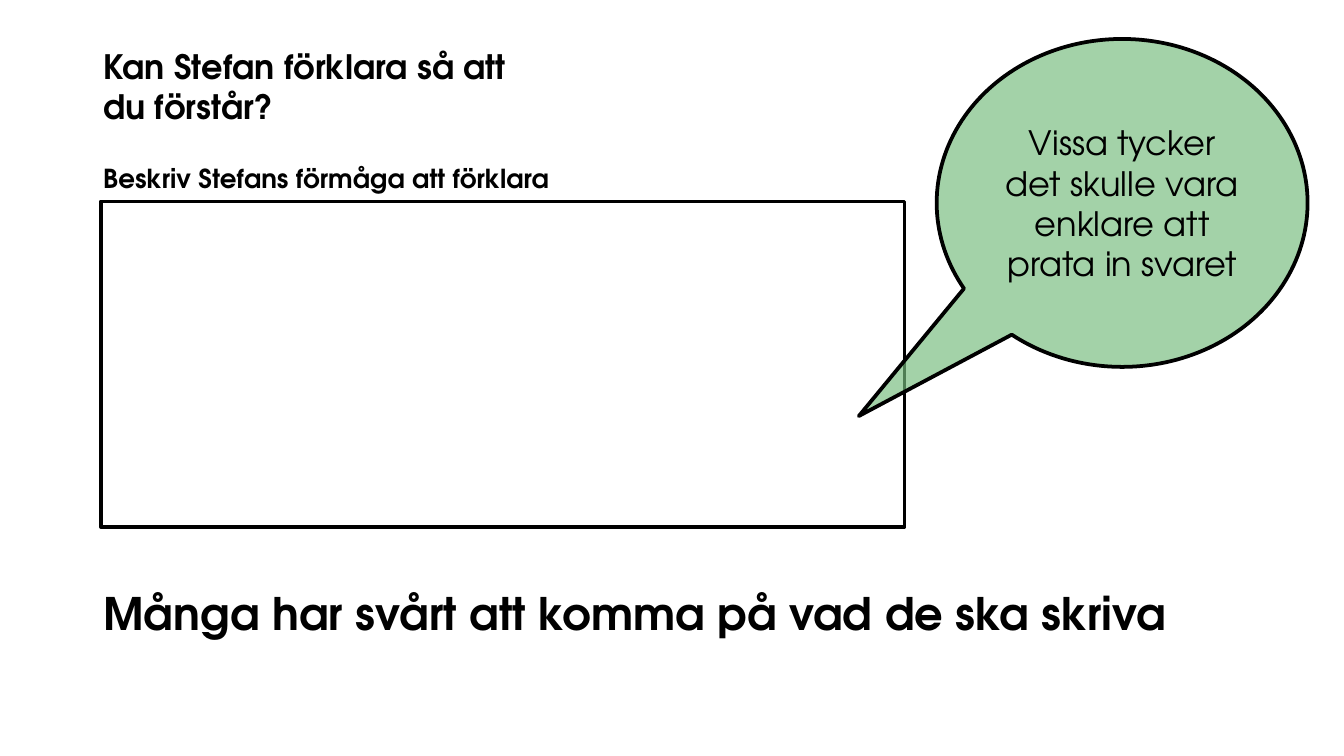
import pptx
import pptx.util
import pptx.dml.color
import pptx.enum.shapes
import pptx.enum.text
import pptx.oxml
import pptx.oxml.ns

# Content
HEADLINE = "Många har svårt att komma på vad de ska skriva"
FORM_QUESTION = "Kan Stefan förklara så att du förstår?"
ANSWER_LABEL = "Beskriv Stefans förmåga att förklara"
SPEECH = "Vissa tycker det skulle vara enklare att prata in svaret"

# Style and layout, in inches
FONT = "TeX Gyre Adventor"
BLACK = pptx.dml.color.RGBColor(0x00, 0x00, 0x00)
GREEN = pptx.dml.color.RGBColor(0x76, 0xBC, 0x7E)
GREEN_OPACITY = 67
SLIDE_WIDTH = 10
SLIDE_HEIGHT = SLIDE_WIDTH * 9 / 16
LEFT = 0.67
TOP = 0.29

SHAPES = pptx.enum.shapes.MSO_SHAPE
ALIGN = pptx.enum.text.PP_ALIGN
ANCHOR = pptx.enum.text.MSO_ANCHOR
AUTO_SIZE = pptx.enum.text.MSO_AUTO_SIZE


def inches(*lengths):
    return [pptx.util.Inches(length) for length in lengths]


def write(part, text, size, bold=True, align=ALIGN.LEFT, anchor=ANCHOR.TOP, wrap=True):
    frame = part.text_frame
    frame.text = text
    frame.word_wrap = wrap
    frame.vertical_anchor = anchor
    paragraph = frame.paragraphs[0]
    paragraph.alignment = align
    paragraph.font.name = FONT
    paragraph.font.size = pptx.util.Pt(size)
    paragraph.font.bold = bold
    paragraph.font.color.rgb = BLACK


def add_outlined(slide, preset, *box):
    outlined = slide.shapes.add_shape(preset, *inches(*box))
    outlined.shadow.inherit = False
    outlined.fill.background()
    outlined.line.color.rgb = BLACK
    outlined.line.width = pptx.util.Pt(2)
    return outlined


def main():
    deck = pptx.Presentation()
    deck.slide_width, deck.slide_height = inches(SLIDE_WIDTH, SLIDE_HEIGHT)
    slide = deck.slides.add_slide(deck.slide_layouts[5])

    # Headline at the foot of the slide
    headline = slide.shapes.title
    headline.left, headline.top, headline.width, headline.height = inches(LEFT, 4.31, 8.24, 0.5)
    write(headline, HEADLINE, 24, wrap=False)
    headline.text_frame.auto_size = AUTO_SIZE.SHAPE_TO_FIT_TEXT

    # Form question and the label of its answer field
    for text, size, top, width, height in (
        (FORM_QUESTION, 18, TOP, 3.23, 0.71),
        (ANSWER_LABEL, 14, 1.16, 4.8, 0.34),
    ):
        form_text = slide.shapes.add_textbox(*inches(LEFT, top, width, height))
        write(form_text, text, size)
        form_text.text_frame.auto_size = AUTO_SIZE.SHAPE_TO_FIT_TEXT

    # Empty answer field
    add_outlined(slide, SHAPES.RECTANGLE, 0.75, 1.5, 5.98, 2.42)

    # Translucent speech bubble pointing into the field
    bubble = add_outlined(slide, SHAPES.OVAL_CALLOUT, 6.97, TOP, 2.76, 2.44)
    bubble.adjustments[0] = -0.71
    bubble.adjustments[1] = 0.65
    bubble.fill.solid()
    bubble.fill.fore_color.rgb = GREEN
    fill_color = bubble.element.spPr.find(
        pptx.oxml.ns.qn("a:solidFill")).find(pptx.oxml.ns.qn("a:srgbClr"))
    fill_color.append(pptx.oxml.parse_xml(
        f'<a:alpha {pptx.oxml.ns.nsdecls("a")} val="{GREEN_OPACITY * 1000}"/>'))
    write(bubble, SPEECH, 18, bold=False, align=ALIGN.CENTER, anchor=ANCHOR.MIDDLE)

    deck.save("out.pptx")


if __name__ == "__main__":
    main()
